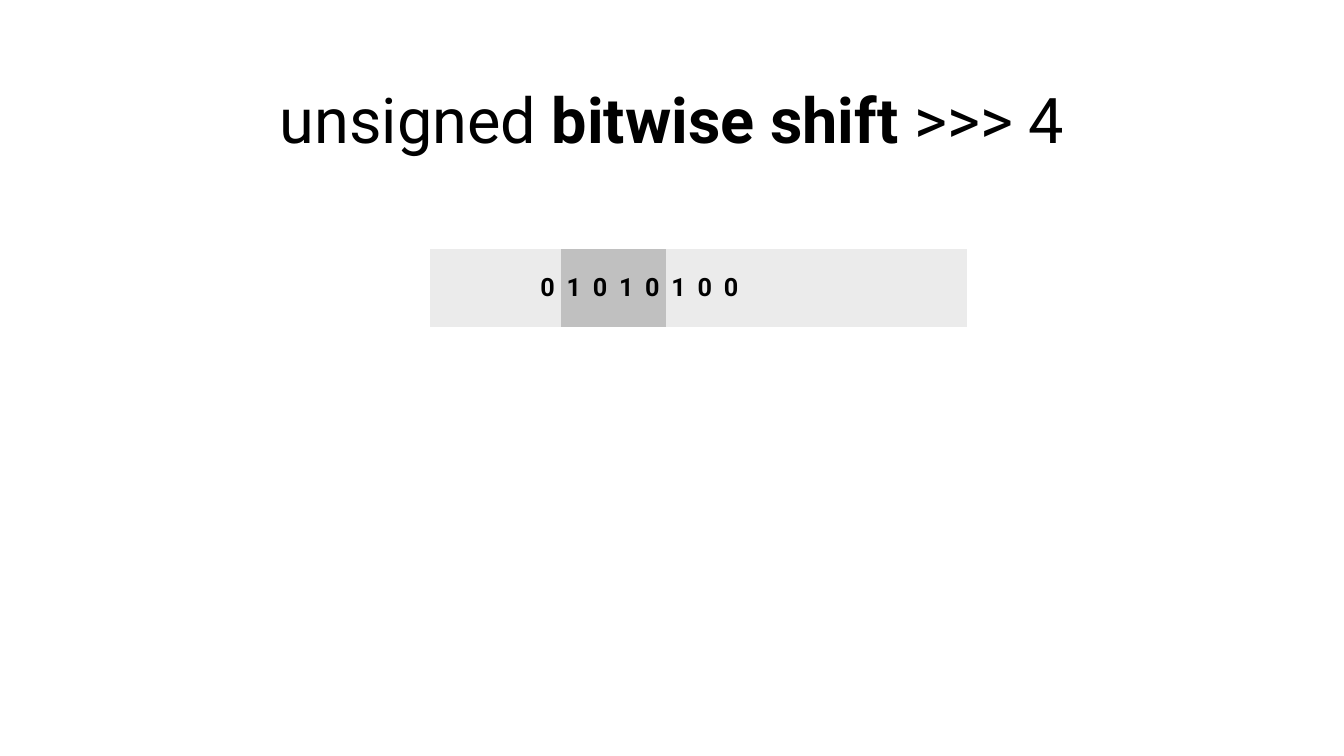
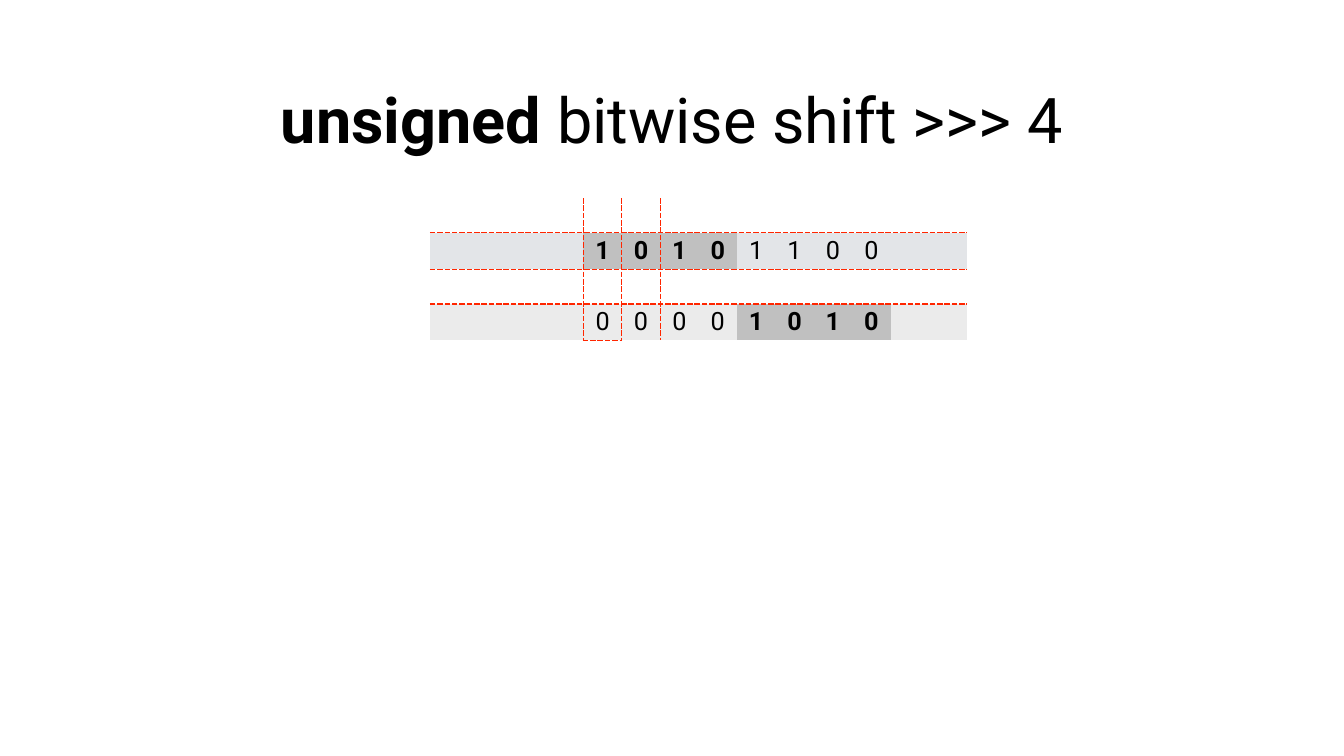
from lxml import etree
from pptx import Presentation
from pptx import util as u
from pptx.dml.color import RGBColor
from pptx.enum import text
from pptx.oxml import ns

WIDTH, HEIGHT = 26.67, 15
FONT = "Roboto"
BLACK = RGBColor(0x00, 0x00, 0x00)
WHITE = RGBColor(0xFF, 0xFF, 0xFF)
LIGHT = RGBColor(0xEB, 0xEB, 0xEB)
COOL = RGBColor(0xE3, 0xE5, 0xE8)
NIBBLE = RGBColor(0xC0, 0xC0, 0xC0)
RED = RGBColor(0xFF, 0x26, 0x00)

COLS, SIGN_COL = 14, 4
TABLE_LEFT, TABLE_TOP = 8.53, 3.93
NO_GRID = "{2D5ABB26-0587-4C30-8999-92F81FD0307C}"
SIDES = ("left", "right", "top", "bottom")


def set_margins(box, inches):
    for side in SIDES:
        setattr(box, f"margin_{side}", u.Inches(inches))


def add_run(p, words, size, bold):
    r = p.add_run()
    r.text = words
    for name, value in {"name": FONT, "size": u.Pt(size), "bold": bold}.items():
        setattr(r.font, name, value)
    r.font.color.rgb = BLACK


def add_title(slide, *runs):
    sp = slide.shapes.add_textbox(u.Inches(WIDTH * 0.18), u.Inches(0.68),
                                  u.Inches(WIDTH * 0.64), u.Inches(3.32))
    tf = sp.text_frame
    tf.word_wrap = True
    tf.vertical_anchor = text.MSO_ANCHOR.MIDDLE
    set_margins(tf, 0.08)
    p = tf.paragraphs[0]
    p.alignment = text.PP_ALIGN.CENTER
    for words, bold in runs:
        add_run(p, words, 90, bold)


def add_bit_table(slide, widths, heights):
    frame = slide.shapes.add_table(
        len(heights), len(widths), u.Inches(TABLE_LEFT), u.Inches(TABLE_TOP),
        u.Inches(sum(widths)), u.Inches(sum(heights)))
    table = frame.table
    table.first_row = table.horz_banding = False
    table._tbl.tblPr.find(ns.qn("a:tableStyleId")).text = NO_GRID
    for column, width in zip(table.columns, widths):
        column.width = u.Inches(width)
    for row, height in zip(table.rows, heights):
        row.height = u.Inches(height)
    return table


def dash_borders(cell, sides):
    tcPr = cell._tc.get_or_add_tcPr()
    for side in (s for s in "LRTB" if s in sides):
        ln = etree.SubElement(tcPr, ns.qn(f"a:ln{side}"), w=str(u.Pt(2)))
        fill = etree.SubElement(ln, ns.qn("a:solidFill"))
        etree.SubElement(fill, ns.qn("a:srgbClr"), val=str(RED))
        etree.SubElement(ln, ns.qn("a:prstDash"), val="sysDash")


def fill_row(table, row, color, bits="", nibble=(), bold=(), borders=None):
    for col in range(COLS):
        cell = table.cell(row, col)
        if borders:
            dash_borders(cell, borders(row, col))
        cell.fill.solid()
        cell.fill.fore_color.rgb = NIBBLE if col in nibble else color
        cell.vertical_anchor = text.MSO_ANCHOR.MIDDLE
        set_margins(cell, 0.06)
        if 0 <= col - SIGN_COL < len(bits):
            p = cell.text_frame.paragraphs[0]
            p.alignment = text.PP_ALIGN.CENTER
            add_run(p, bits[col - SIGN_COL], 36, col in bold)


def sign_borders(row, col):
    sides = {0: "B", 1: "TB", 2: "T", 3: ""}[row]
    sides += {SIGN_COL - 1: "R", SIGN_COL: "LR", SIGN_COL + 1: "L"}.get(col, "")
    return sides + ("B" if (row, col) == (3, SIGN_COL) else "")


def shift_slide(slide):
    add_title(slide, ("unsigned ", False), ("bitwise shift", True), (" >>> 4", False))
    table = add_bit_table(slide, [0.52] * 12 + [1.55, 2.87], [1.02, 1.54])
    fill_row(table, 0, WHITE)
    fill_row(table, 1, LIGHT, "01010100", range(5, 9), range(COLS))


def unsigned_slide(slide):
    add_title(slide, ("unsigned", True), (" bitwise shift >>> 4", False))
    table = add_bit_table(slide, [WIDTH * 0.4 / COLS] * COLS, [0.69] * 4)
    before, after = range(4, 8), range(8, 12)
    fill_row(table, 0, WHITE, borders=sign_borders)
    fill_row(table, 1, COOL, "10101100", before, before, sign_borders)
    fill_row(table, 2, WHITE, borders=sign_borders)
    fill_row(table, 3, LIGHT, "00001010", after, after, sign_borders)


def main():
    prs = Presentation()
    prs.slide_width, prs.slide_height = u.Inches(WIDTH), u.Inches(HEIGHT)
    for build in (shift_slide, unsigned_slide):
        build(prs.slides.add_slide(prs.slide_layouts[6]))
    prs.save("out.pptx")


if __name__ == "__main__":
    main()
